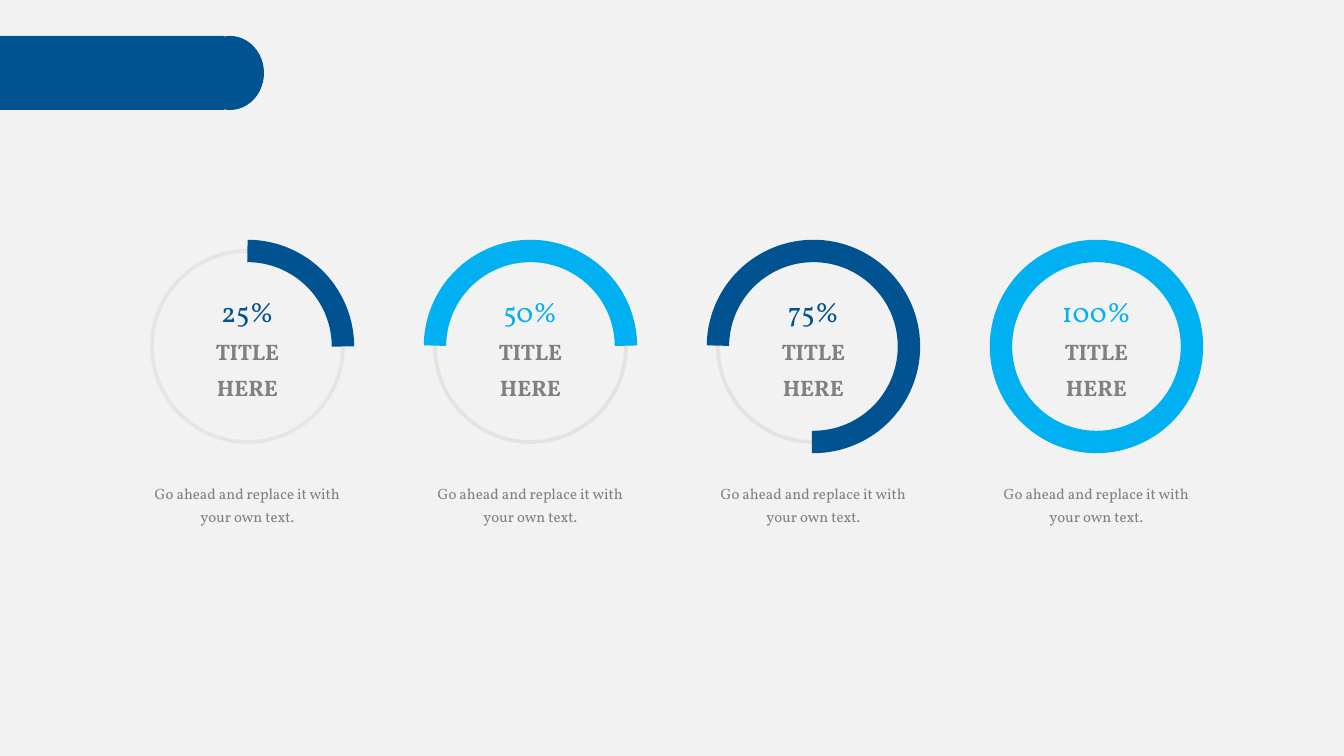
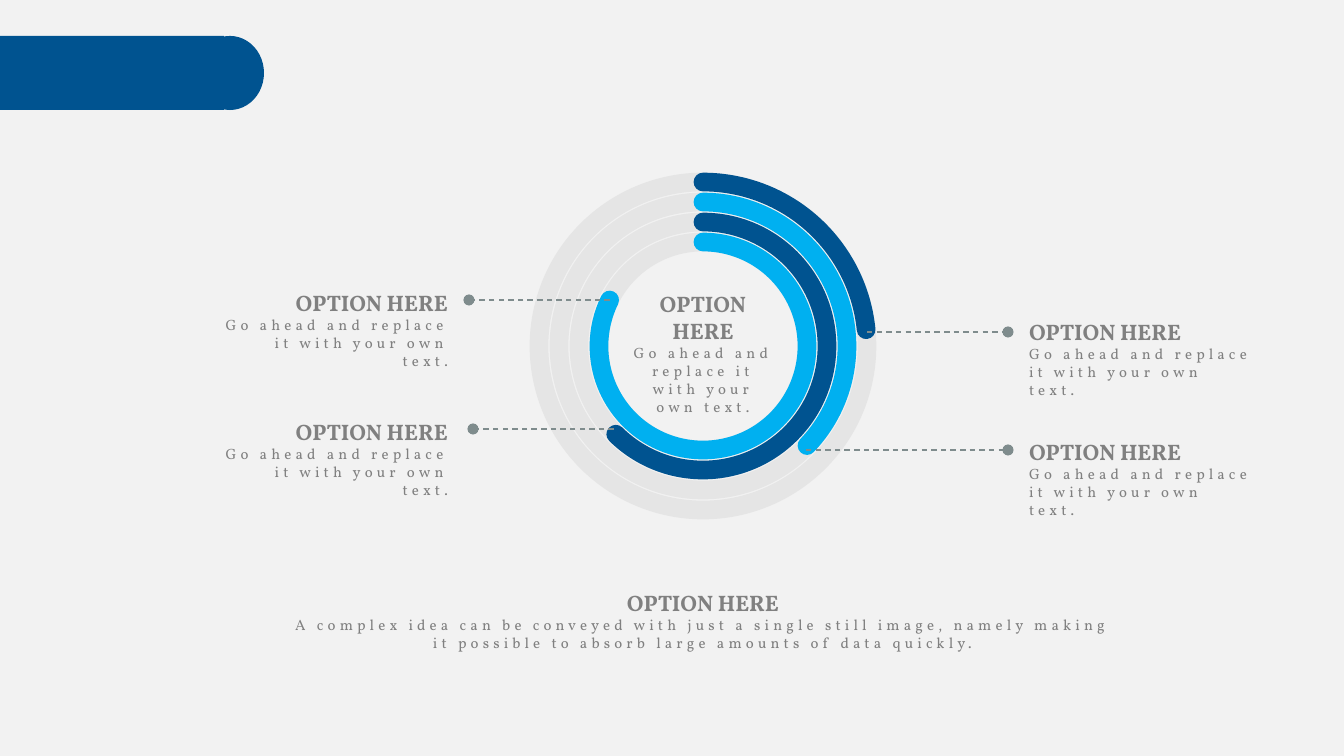
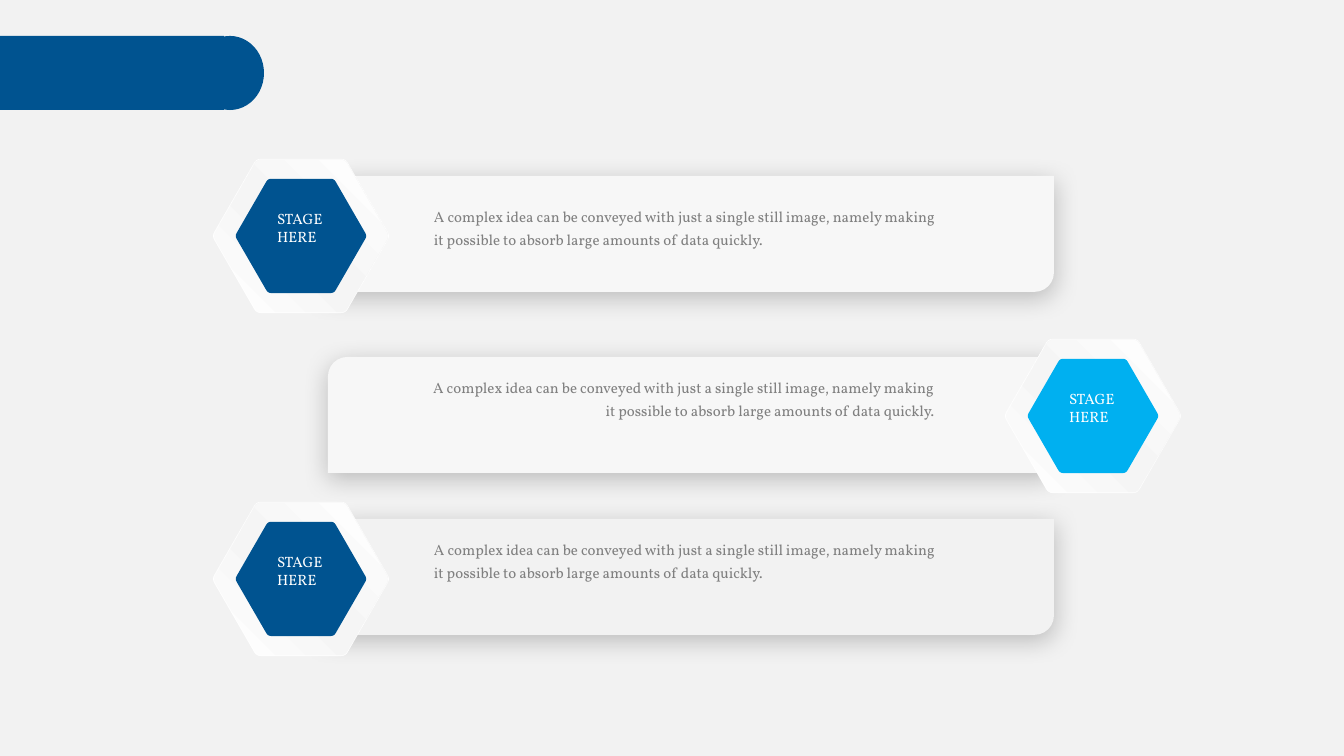
import copy
import math

from lxml import etree
from pptx import Presentation
from pptx import util as u
from pptx.dml.color import RGBColor
from pptx.enum import dml, shapes, text
from pptx.oxml.ns import qn

PX = 914400 / 134.4
NAVY, SKY, GREY, TRACK, PAPER = "005390", "00B0F0", "808080", "D9D9D9", "F2F2F2"
FONT = "Vollkorn"
KIND = shapes.MSO_SHAPE
LEFT, CENTER, RIGHT = text.PP_ALIGN.LEFT, text.PP_ALIGN.CENTER, text.PP_ALIGN.RIGHT
rgb = RGBColor.from_string


def draw(slide, kind, box, fill=None, line=None, width=0, alpha=100):
    place = [round(v * PX) for v in box]
    if kind is None:
        return slide.shapes.add_textbox(*place)
    shape = slide.shapes.add_shape(kind, *place)
    shape.shadow.inherit = False
    if fill:
        shape.fill.solid()
        shape.fill.fore_color.rgb = rgb(fill)
    else:
        shape.fill.background()
    if line:
        shape.line.color.rgb = rgb(line)
        shape.line.width = u.Pt(width)
        if alpha < 100:
            colour = shape.element.spPr.xpath("a:ln/a:solidFill/a:srgbClr")[0]
            etree.SubElement(colour, qn("a:alpha"), val=str(alpha * 1000))
    else:
        shape.line.fill.background()
    return shape


def write(shape, align, lines, inset=(13, 7), spacing=None, tracking=0):
    frame = shape.text_frame
    frame.word_wrap = True
    frame.margin_left = frame.margin_right = round(inset[0] * PX)
    frame.margin_top = frame.margin_bottom = round(inset[1] * PX)
    for i, (words, size, colour, bold) in enumerate(lines):
        paragraph = frame.paragraphs[0] if i == 0 else frame.add_paragraph()
        paragraph.alignment = align
        if spacing:
            paragraph.line_spacing = spacing
        run = paragraph.add_run()
        run.text = words
        run.font.name = FONT
        run.font.size = u.Pt(size)
        run.font.bold = bold
        run.font.color.rgb = rgb(colour)
        if tracking and not bold:
            run._r.get_or_add_rPr().set("spc", str(tracking))


prs = Presentation()
prs.slide_width = round(1344 * PX)
prs.slide_height = round(756 * PX)
backdrop = prs.slide_master.background.fill
backdrop.solid()
backdrop.fore_color.rgb = rgb(PAPER)

percents, options, stages = [prs.slides.add_slide(prs.slide_layouts[6]) for _ in range(3)]
for slide in (percents, options, stages):
    draw(slide, KIND.RECTANGLE, (0, 36, 224, 74), NAVY)
    draw(slide, KIND.OVAL, (196, 36, 68, 74), NAVY)

replace_text = "Go ahead and replace it with your own text."
complex_idea = (
    "A complex idea can be conveyed with just a single still image, "
    "namely making it possible to absorb large amounts of data quickly."
)

gauges = [
    ("25%", NAVY, "DCDDDD", 270, 0),
    ("50%", SKY, TRACK, 180.5, 359.55),
    ("75%", NAVY, TRACK, 180.5, 90.92),
    ("100%", SKY, "FFFFFF", 180.5, 180.47),
]
for i, (percent, colour, track, start, end) in enumerate(gauges):
    x = 152 + 283 * i
    dial = draw(percents, KIND.OVAL, (x, 251, 191, 191), None, track, 2, 60)
    write(dial, CENTER, [(percent, 15, colour, False), ("TITLE HERE", 12, GREY, True)],
          spacing=u.Pt(19.5))
    dial.text_frame.vertical_anchor = text.MSO_ANCHOR.MIDDLE
    sweep = draw(percents, KIND.ARC, (x, 251, 191, 191), None, colour, 12)
    sweep.adjustments[0], sweep.adjustments[1] = start * 0.6, end * 0.6
    caption = draw(percents, None, (x - 20, 472, 231, 60))
    write(caption, CENTER, [(replace_text, 8, GREY, False)], spacing=1.3)

rings = [(539 + 20 * i, 182 + 20 * i, 328 - 40 * i, 328 - 40 * i) for i in range(4)]
for ring in rings:
    draw(options, KIND.OVAL, ring, None, TRACK, 10, 50)
for ring, colour, end in zip(rings, (NAVY, SKY) * 2, (354.28, 43.74, 134.69, 206.24)):
    sweep = draw(options, KIND.ARC, ring, None, colour, 10)
    sweep.adjustments[0], sweep.adjustments[1] = 162, end * 0.6
    sweep.element.spPr.xpath("a:ln")[0].set("cap", "rnd")

for ring_x, dot_x, y in ((867, 1008, 332), (806, 1008, 450), (614, 473, 429), (610, 469, 300)):
    ends = [round(v * PX) for v in (ring_x, y, dot_x, y)]
    leader = options.shapes.add_connector(shapes.MSO_CONNECTOR.STRAIGHT, *ends)
    leader.line.color.rgb = rgb("7F8C8D")
    leader.line.width = u.Pt(0.75)
    leader.line.dash_style = dml.MSO_LINE.DASH
    outline = leader.element.spPr.xpath("a:ln")[0]
    etree.SubElement(outline, qn("a:tailEnd"), type="oval")
    etree.SubElement(leader.element.spPr, qn("a:effectLst"))

for box, align, words in (
    ((619, 285, 168, 137), CENTER, replace_text),
    ((1019, 313, 244, 74), LEFT, replace_text),
    ((1019, 433, 244, 74), LEFT, replace_text),
    ((214, 284, 244, 74), RIGHT, replace_text),
    ((214, 413, 244, 74), RIGHT, replace_text),
    ((279, 584, 848, 74), CENTER, complex_idea),
):
    option = draw(options, None, box)
    write(option, align, [("OPTION HERE", 12, GREY, True), (words, 8, GREY, False)],
          inset=(10, 5), tracking=220)

for banner_x, banner_y, hex_x, hex_y, text_x, text_y, align, pale, colour in (
    (326, 176, 301, 236, 419, 194, LEFT, "F7F7F7", NAVY),
    (328, 357, 1093, 416, 408, 365, RIGHT, "F7F7F7", SKY),
    (326, 519, 301, 579, 419, 527, LEFT, PAPER, NAVY),
):
    banner = draw(stages, KIND.ROUND_2_DIAG_RECTANGLE, (banner_x, banner_y, 728, 116), pale)
    effects = banner.element.spPr.xpath("a:effectLst")[0]
    glow = etree.SubElement(effects, qn("a:outerShdw"), blurRad=str(u.Pt(13)),
                            dist=str(u.Pt(3)), dir="5400000", algn="ctr", rotWithShape="0")
    shade = etree.SubElement(glow, qn("a:srgbClr"), val="000000")
    etree.SubElement(shade, qn("a:alpha"), val="22000")

    for radius, fill in ((89, "FFFFFF"), (88, None), (66, colour)):
        corners = [(hex_x + radius * math.cos(math.radians(60 * k)),
                    hex_y + radius * math.sin(math.radians(60 * k))) for k in range(6)]
        points = []
        for k, corner in enumerate(corners):
            before, after = corners[k - 1], corners[(k + 1) % 6]
            for t in (0, 0.25, 0.5, 0.75, 1):
                points.append([
                    round((c + 0.05 * (1 - t) ** 2 * (b - c) + 0.05 * t ** 2 * (a - c)) * PX)
                    for b, c, a in zip(before, corner, after)])
        builder = stages.shapes.build_freeform(*points[0], scale=1.0)
        builder.add_line_segments(points[1:], close=True)
        hexagon = builder.convert_to_shape()
        hexagon.shadow.inherit = False
        hexagon.line.fill.background()
        if fill:
            hexagon.fill.solid()
            hexagon.fill.fore_color.rgb = rgb(fill)
        else:
            hexagon.fill.gradient()
            hexagon.fill.gradient_angle = 45
            stops = hexagon.element.spPr.xpath("a:gradFill/a:gsLst")[0]
            stops.append(copy.deepcopy(stops[0]))
            sheen = ((0, "FFFFFF"), (0.47, "F5F5F5"), (1, "FFFFFF"))
            for stop, (position, tint) in zip(hexagon.fill.gradient_stops, sheen):
                stop.position = position
                stop.color.rgb = rgb(tint)

    stage = draw(stages, None, (hex_x - 37, hex_y - 33, 74, 50))
    write(stage, LEFT, [("STAGE HERE", 8, "FFFFFF", False)])
    idea = draw(stages, None, (text_x, text_y, 542, 62))
    write(idea, align, [(complex_idea, 8, GREY, False)], inset=(15, 8), spacing=1.3)

prs.save("out.pptx")
